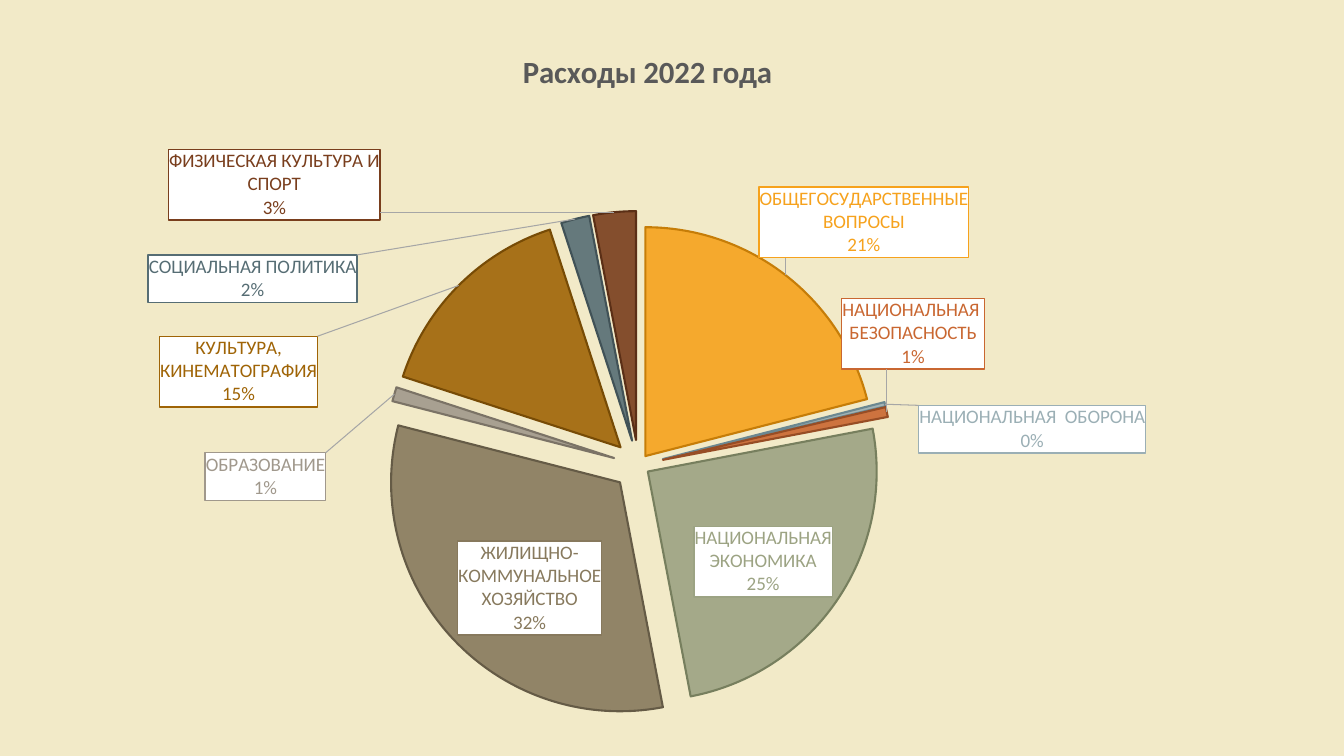
import pptx
import pptx.util
import pptx.dml.color
import pptx.chart.data
import pptx.enum.chart
import pptx.oxml
import pptx.oxml.ns

Pt = pptx.util.Pt
RGB = pptx.dml.color.RGBColor.from_string
ns = ' '.join(pptx.oxml.ns.nsdecls(p) for p in ('c', 'a'))

color = {'back': 'F2EAC8', 'title': '595959', 'box': 'FFFFFF', 'lead': 'A6A6A6'}
head = 'Расходы 2022 года'
items = [
    ('ОБЩЕГОСУДАРСТВЕННЫЕ ВОПРОСЫ', 21, 'F6A21D', 5, (-0.025, -0.019)),
    ('НАЦИОНАЛЬНАЯ  ОБОРОНА', 0.3, '9BAFB5', 11, (0.023, 0.073)),
    ('НАЦИОНАЛЬНАЯ  БЕЗОПАСНОСТЬ', 0.7, 'C96731', 11, (-0.042, -0.061)),
    ('НАЦИОНАЛЬНАЯ ЭКОНОМИКА', 25, '9CA383', 5, None),
    ('ЖИЛИЩНО-КОММУНАЛЬНОЕ ХОЗЯЙСТВО', 32, '87795D', 11, None),
    ('ОБРАЗОВАНИЕ', 1, 'A0988C', 11, (-0.052, 0.157)),
    ('КУЛЬТУРА, КИНЕМАТОГРАФИЯ', 15, '9F6406', 11, (-0.113, 0.183)),
    ('СОЦИАЛЬНАЯ ПОЛИТИКА', 2, '566D74', 11, (-0.179, 0.13)),
    ('ФИЗИЧЕСКАЯ КУЛЬТУРА И СПОРТ', 3, '793E1D', 11, (-0.193, 0.02)),
]


def node(text):
    return pptx.oxml.parse_xml(text.replace('>', f' {ns}>', 1))


def place(x, y, rest=''):
    return node(f'<c:layout><c:manualLayout>{rest}<c:x val="{x}"/><c:y val="{y}"/>'
                '</c:manualLayout></c:layout>')


deck = pptx.Presentation()
deck.slide_width, deck.slide_height = Pt(960), Pt(540)
slide = deck.slides.add_slide(deck.slide_layouts[6])
slide.background.fill.solid()
slide.background.fill.fore_color.rgb = RGB(color['back'])

data = pptx.chart.data.CategoryChartData()
data.categories = [item[0] for item in items]
data.add_series(head, [item[1] for item in items])
chart = slide.shapes.add_chart(pptx.enum.chart.XL_CHART_TYPE.PIE, Pt(60.5), Pt(31),
                               Pt(865.5), Pt(490.3), data).chart
chart.has_legend = False
chart.font.name = 'Calibri'
chart.font.size = Pt(10)

chart.has_title = True
title = chart.chart_title
title.include_in_layout = False
para = title.text_frame.paragraphs[0]
para.text = head
para.font.size = Pt(22)
para.font.bold = True
para.font.name = 'Calibri'
para.font.color.rgb = RGB(color['title'])
top = title._element
for old in top.findall(pptx.oxml.ns.qn('c:layout')):
    top.remove(old)
top.find(pptx.oxml.ns.qn('c:tx')).addnext(
    place(0.357, 0.002, '<c:xMode val="edge"/><c:yMode val="edge"/>'))

area = chart._chartSpace.chart.plotArea
for old in area.findall(pptx.oxml.ns.qn('c:layout')):
    area.remove(old)
frame = place(0.268, 0.281, '<c:layoutTarget val="inner"/><c:xMode val="edge"/><c:yMode val="edge"/>')
for tag, size in (('w', 0.378), ('h', 0.667)):
    frame[0].append(node(f'<c:{tag} val="{size}"></c:{tag}>'))
area.insert(0, frame)

plot = chart.plots[0]
plot.vary_by_categories = True
plot.has_data_labels = False
pie = plot.series[0]

shows = ('<c:showLegendKey val="0"/><c:showVal val="0"/>'
         '<c:showCatName val="1"/><c:showSerName val="0"/><c:showPercent val="1"/>'
         '<c:showBubbleSize val="0"/><c:separator>\n</c:separator>')
labels = node(f'<c:dLbls><c:dLblPos val="inEnd"/>{shows}<c:showLeaderLines val="1"/>'
              '<c:leaderLines><c:spPr>'
              f'<a:ln w="9525"><a:solidFill><a:srgbClr val="{color["lead"]}"/></a:solidFill></a:ln>'
              '</c:spPr></c:leaderLines></c:dLbls>')

for i, (name, value, hue, gap, shift) in enumerate(items):
    form = pie.points[i].format
    form.fill.solid()
    form.fill.fore_color.rgb = RGB(hue)
    form.line.width = Pt(1.5)
    form.line.color.rgb = RGB(hue)
    form.line.color.brightness = -0.25
    slot = pie._element.findall(pptx.oxml.ns.qn('c:dPt'))[i]
    slot.find('.//' + pptx.oxml.ns.qn('a:srgbClr')).append(node('<a:alpha val="90000"></a:alpha>'))
    slot.find(pptx.oxml.ns.qn('c:spPr')).addprevious(
        node(f'<c:explosion val="{gap}"></c:explosion>'))

    paint = f'<a:solidFill><a:srgbClr val="{hue}"/></a:solidFill>'
    spot = 'bestFit' if shift else 'inEnd'
    label = node(
        f'<c:dLbl><c:idx val="{i}"/><c:spPr><a:solidFill><a:srgbClr val="{color["box"]}"/>'
        f'</a:solidFill><a:ln w="12700">{paint}</a:ln></c:spPr><c:txPr><a:bodyPr wrap="square"/>'
        f'<a:p><a:pPr><a:defRPr sz="1360" b="0">{paint}<a:latin typeface="Calibri"/></a:defRPr>'
        f'</a:pPr><a:endParaRPr lang="ru-RU"/></a:p></c:txPr><c:dLblPos val="{spot}"/>'
        f'{shows}</c:dLbl>')
    # the index node would be followed by the label offset
    if shift:
        label[0].addnext(place(*shift))
    labels.insert(i, label)

pie._element.find(pptx.oxml.ns.qn('c:cat')).addprevious(labels)
deck.save("out.pptx")
